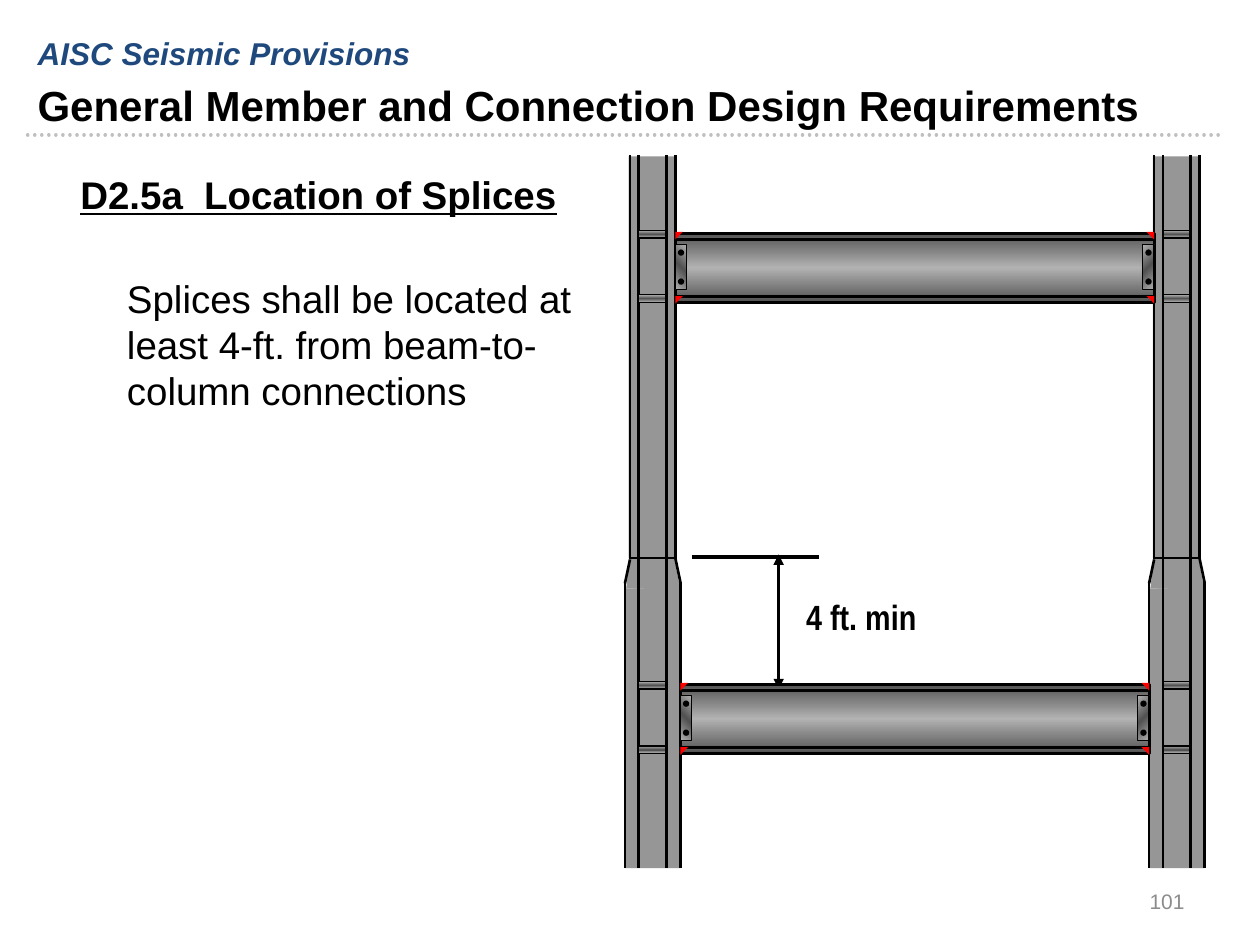
from collections import namedtuple
from copy import deepcopy

from pptx import Presentation
from pptx.dml.color import RGBColor
from pptx.enum import dml, shapes, text
from pptx.oxml import ns, xmlchemy
from pptx.util import Inches, Pt

Theme = namedtuple("Theme", "font narrow black blue dots number steel dark light weld "
                            "title kicker body label small")
theme = Theme("Arial", "Arial Narrow", "000000", "1F497D", "BFBFBF", "8C8C8C",
              "969696", "525252", "B2B2B2", "FF0000", 24, 18, 22, 20, 12)

deck = Presentation()
deck.slide_width, deck.slide_height = Inches(10), Inches(7.5)
page = deck.slides.add_slide(deck.slide_layouts[6])


def add_line(x1, y1, x2, y2, width=1.5, color=theme.black):
    line = page.shapes.add_connector(shapes.MSO_CONNECTOR.STRAIGHT, Inches(x1), Inches(y1),
                                     Inches(x2), Inches(y2))
    line.line.width = Pt(width)
    line.line.color.rgb = RGBColor.from_string(color)
    line._element.spPr.append(xmlchemy.OxmlElement("a:effectLst"))
    return line


def add_part(kind, left, top, width, height, colors, outline=0, angle=90):
    """One colour gives a solid fill, three an evenly spaced gradient."""
    part = page.shapes.add_shape(kind, Inches(left), Inches(top), Inches(width), Inches(height))
    part.shadow.inherit = False
    if len(colors) == 1:
        part.fill.solid()
        part.fill.fore_color.rgb = RGBColor.from_string(colors[0])
    else:
        part.fill.gradient()
        part.fill.gradient_angle = angle
        stop_list = part._element.spPr.find(".//" + ns.qn("a:gsLst"))
        stop_list.append(deepcopy(stop_list[0]))
        for stop, color, position in zip(part.fill.gradient_stops, colors, (0, 0.5, 1)):
            stop.color.rgb = RGBColor.from_string(color)
            stop.position = position
    if outline:
        part.line.width = Pt(outline)
        part.line.color.rgb = RGBColor.from_string(theme.black)
    else:
        part.line.fill.background()
    return part


# Dotted rule under the heading
rule = add_line(0.22, 1.07, 9.72, 1.07, 2, theme.dots)
rule.line.dash_style = dml.MSO_LINE.ROUND_DOT
rule.line._get_or_add_ln().set("cap", "rnd")

# Text: wording, box, size, colour, font, styles
for words, area, size, color, font, styles in (
    ("General Member and Connection Design Requirements", (0.2, 0.58, 8.98, 0.44),
     theme.title, theme.black, theme.font, ("bold",)),
    ("AISC Seismic Provisions", (0.2, 0.22, 8.98, 0.31),
     theme.kicker, theme.blue, theme.font, ("bold", "italic")),
    ("D2.5a  Location of Splices", (0.54, 1.31, 7.73, 0.47),
     theme.body, theme.black, theme.font, ("bold", "underline")),
    ("Splices shall be located at least 4-ft. from beam-to-column connections",
     (0.91, 2.13, 3.74, 1.21), theme.body, theme.black, theme.font, ()),
    ("4 ft. min", (6.3, 4.68, 1.2, 0.43), theme.label, theme.black, theme.narrow, ("bold",)),
    ("101", (7.17, 6.95, 2.33, 0.4), theme.small, theme.number, theme.font, ()),
):
    box = page.shapes.add_textbox(*map(Inches, area))
    box.text_frame.word_wrap = True
    para = box.text_frame.paragraphs[0]
    para.text = words
    para.font.name, para.font.size = font, Pt(size)
    para.font.color.rgb = RGBColor.from_string(color)
    for style in styles:
        setattr(para.font, style, True)
# The page number comes last
para.alignment = text.PP_ALIGN.RIGHT
box.text_frame.vertical_anchor = text.MSO_ANCHOR.MIDDLE

# Splice height dimension
add_line(5.49, 4.42, 6.5, 4.42, 2)
dimension = add_line(6.18, 4.4, 6.18, 5.47)
for end in ("a:headEnd", "a:tailEnd"):
    arrow = xmlchemy.OxmlElement(end)
    arrow.set("type", "triangle")
    dimension.line._get_or_add_ln().append(arrow)

# Columns: narrow shaft above the splice, wide shaft below
RECT = shapes.MSO_SHAPE.RECTANGLE
for x in (4.96, 9.12):
    taper = page.shapes.build_freeform(Inches(x + 0.01), Inches(4.67))
    taper.add_line_segments([(Inches(x + dx), Inches(y)) for dx, y in
                             ((0.04, 4.42), (0.39, 4.42), (0.44, 4.68))])
    splice = taper.convert_to_shape()
    splice.shadow.inherit = False
    splice.fill.solid()
    splice.fill.fore_color.rgb = RGBColor.from_string(theme.steel)
    splice.line.fill.background()
    add_part(RECT, x, 4.67, 0.44, 2.22, [theme.steel])
    add_part(RECT, x + 0.03, 1.24, 0.37, 3.19, [theme.steel])
    for dx in (0.04, 0.11, 0.33, 0.4):
        add_line(x + dx, 4.44, x + dx, 1.23)
    for dx, top in ((0, 4.63), (0.11, 4.44), (0.33, 4.44), (0.44, 4.62)):
        add_line(x + dx, top, x + dx, 6.89)
    add_line(x + 0.04, 4.43, x + 0.4, 4.43)
    add_line(x, 4.63, x + 0.04, 4.44)
    add_line(x + 0.44, 4.62, x + 0.4, 4.43)

# Beams with their end connections
plate_colors = [theme.light, theme.dark, theme.light]
for left, right, top in ((5.4, 9.12, 5.43), (5.36, 9.16, 1.85)):
    add_part(RECT, left, top, right - left, 0.55, [theme.dark, theme.light, theme.dark], 1.75)
    for dy in (0.05, 0.5):
        add_line(left, top + dy, right, top + dy, 1.75)
    # Per end: shear plate, bolts, welds, stiffeners, gradient angle, weld rotation
    for plate, bolt, weld, stiffener, angle, turn in (
        (right - 0.09, right - 0.07, right - 0.06, 9.23, 315, 180),
        (left, left + 0.02, left, 5.07, 225, 90),
    ):
        add_part(RECT, plate, top + 0.09, 0.09, 0.36, plate_colors, 0.75, angle)
        for dy in (0.13, 0.36):
            add_part(shapes.MSO_SHAPE.OVAL, bolt, top + dy, 0.05, 0.05, [theme.black])
        for dy in (-0.01, 0.5):
            corner = add_part(shapes.MSO_SHAPE.RIGHT_TRIANGLE, weld, top + dy, 0.06, 0.06,
                              [theme.weld])
            corner.rotation = turn
            add_part(RECT, stiffener, top + dy - 0.01, 0.21, 0.06, plate_colors, 0.75)

deck.save("out.pptx")
